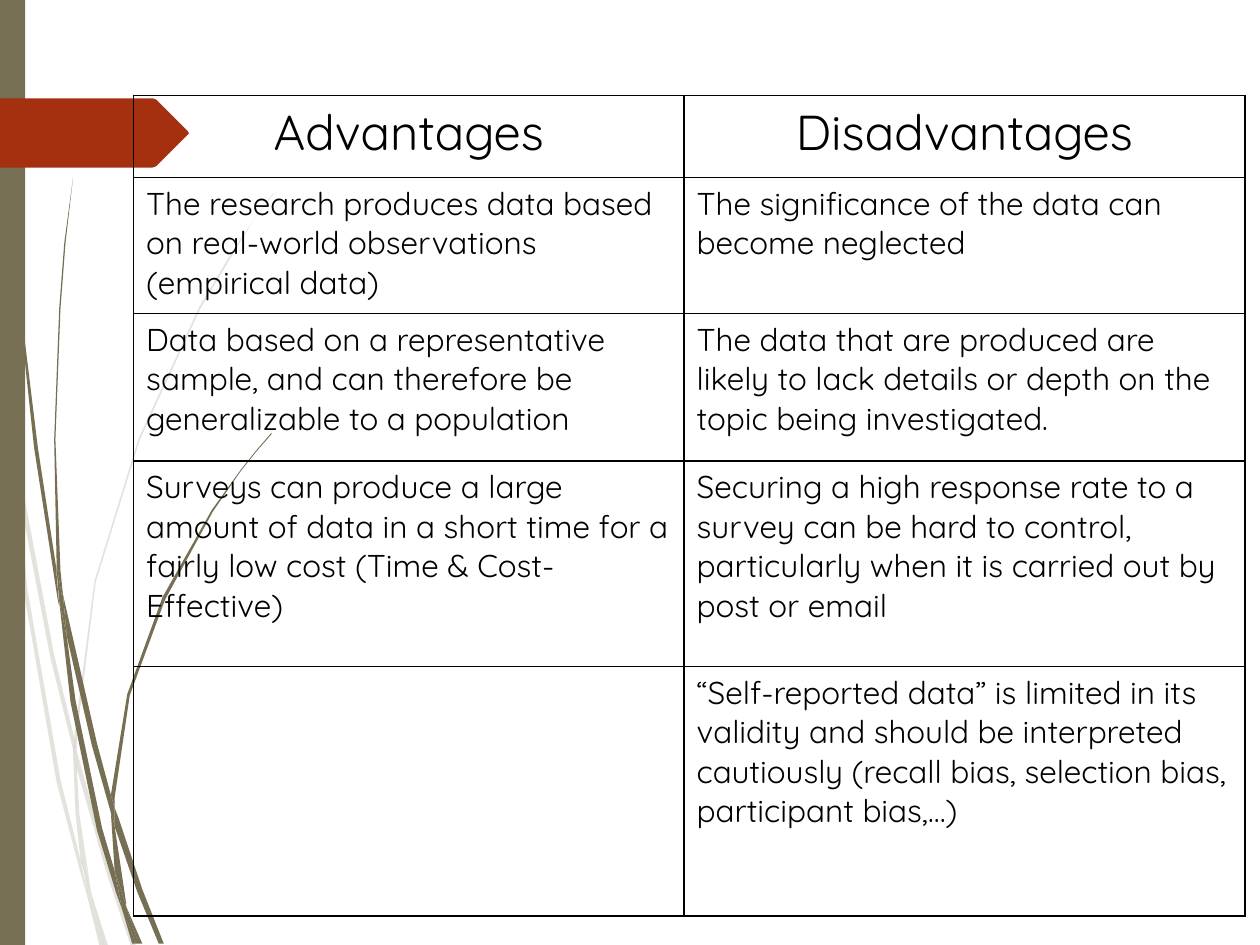
from pptx import Presentation
from pptx.dml.color import RGBColor
from pptx.enum.shapes import MSO_SHAPE as Shape
from pptx.enum.text import PP_ALIGN as Align
from pptx.oxml.xmlchemy import OxmlElement as Element
from pptx.util import Pt

PX = 9144  # EMU per px, 100 px to the inch
OLIVE = RGBColor(0x76, 0x6F, 0x54)
RUST = RGBColor(0xA5, 0x30, 0x10)
BLACK = RGBColor(0, 0, 0)

prs = Presentation()
prs.slide_width, prs.slide_height = 1000 * PX, 750 * PX
slide = prs.slides.add_slide(prs.slide_layouts[6])


def draw_outline(shapes, points, color, alpha=None):
    builder = shapes.build_freeform(*points[0], scale=PX)
    builder.add_line_segments(points[1:])
    outline = builder.convert_to_shape()
    outline.shadow.inherit = False
    outline.fill.solid()
    outline.fill.fore_color.rgb = color
    outline.line.fill.background()
    if alpha:
        opacity = Element("a:alpha")
        opacity.set("val", str(alpha * 1000))
        outline.fill._xPr.find(".//{*}srgbClr").append(opacity)


def write(cell, text, size=18, align=None):
    paragraph = cell.text_frame.paragraphs[0]
    paragraph.alignment = align
    run = paragraph.add_run()
    run.text = text
    run.font.size = Pt(size)
    run.font.name = "Quicksand"
    run.font.color.rgb = BLACK


# Grass blades: pale ones behind, solid ones in front
pale_blades = [
    [(8, 350), (6, 322), (0, 282), (0, 299), (7, 344)],
    [(40, 522), (59, 599), (59, 586), (43, 520), (10, 345), (12, 376)],
    [(64, 607), (61, 596), (61, 610), (85, 694), (104, 751), (108, 751), (88, 692)],
    [(83, 751), (86, 751), (73, 711)],
    [(64, 683), (48, 619), (22, 469), (12, 376), (8, 350), (19, 470), (45, 621),
     (64, 693), (70, 714), (69, 707)],
    [(58, 599), (60, 646), (64, 683), (67, 692), (73, 711), (72, 706), (63, 646),
     (61, 610), (61, 608)],
    [(61, 584), (76, 462), (111, 349), (159, 245), (187, 198), (201, 175), (217, 154),
     (217, 153), (201, 175), (186, 197), (158, 244), (110, 348), (75, 461), (59, 584),
     (59, 586), (61, 596)],
    [(70, 714), (79, 751), (82, 751)],
    [(61, 608), (61, 610), (61, 596), (59, 586), (58, 599)],
    [(67, 692), (65, 683), (69, 707), (70, 714), (82, 751), (83, 751), (73, 711)],
]
solid_blades = [
    [(5, 110), (14, 233), (27, 355), (46, 477), (47, 481), (45, 457), (45, 453),
     (30, 355), (15, 232), (6, 109), (4, 48), (3, 0), (2, 0), (3, 48)],
    [(73, 592), (88, 645), (88, 633), (88, 631), (77, 590), (50, 472), (53, 505)],
    [(94, 649), (91, 641), (91, 656), (109, 708), (126, 749), (130, 749), (113, 706)],
    [(91, 691), (81, 657), (60, 556), (53, 505), (47, 477), (56, 557), (77, 659),
     (92, 708), (97, 722), (96, 717)],
    [(50, 472), (48, 453), (44, 349), (48, 245), (52, 193), (58, 141), (51, 193),
     (47, 245), (43, 349), (45, 449), (49, 472)],
    [(110, 749), (113, 749), (100, 719)],
    [(47, 477), (53, 505), (50, 472), (49, 472), (45, 449), (45, 453)],
    [(91, 633), (103, 552), (131, 476), (169, 406), (191, 374), (203, 359), (216, 344),
     (215, 344), (203, 358), (191, 373), (168, 405), (129, 474), (101, 551), (88, 631),
     (91, 641)],
    [(97, 722), (105, 749), (108, 749)],
    [(88, 645), (91, 691), (96, 706), (100, 719), (100, 716), (91, 656), (90, 651)],
    [(88, 645), (90, 651), (91, 656), (91, 641), (88, 631), (88, 633)],
    [(96, 706), (91, 691), (96, 717), (97, 722), (108, 749), (110, 749), (100, 719)],
]
for blades, alpha in ((pale_blades, 20), (solid_blades, None)):
    tuft = slide.shapes.add_group_shape()
    for blade in blades:
        draw_outline(tuft.shapes, blade, OLIVE, alpha)

# Side bar and arrow tag
side_bar = slide.shapes.add_shape(Shape.RECTANGLE, 0, 0, 20 * PX, 750 * PX)
side_bar.shadow.inherit = False
side_bar.fill.solid()
side_bar.fill.fore_color.rgb = OLIVE
side_bar.line.fill.background()
draw_outline(slide.shapes, [(0, 78), (121, 78), (124, 79), (149, 104), (150, 106),
                            (149, 107), (124, 132), (121, 133), (0, 133)], RUST)

# Comparison table
comparison = [
    ("Advantages", "Disadvantages"),
    ("The research produces data based on real-world observations (empirical data)",
     "The significance of the data can become neglected"),
    ("Data based on a representative sample, and can therefore be generalizable to a population",
     "The data that are produced are likely to lack details or depth on the topic being "
     "investigated."),
    ("Surveys can produce a large amount of data in a short time for a fairly low cost "
     "(Time & Cost-Effective)",
     "Securing a high response rate to a survey can be hard to control, particularly when "
     "it is carried out by post or email"),
    ("",
     "“Self-reported data” is limited in its validity and should be interpreted cautiously "
     "(recall bias, selection bias, participant bias,…)"),
]
column_widths = [437, 445]
row_heights = [65, 108, 117, 163, 198]
table = slide.shapes.add_table(
    len(row_heights), len(column_widths), 106 * PX, 76 * PX,
    sum(column_widths) * PX, sum(row_heights) * PX).table
table.first_row = table.horz_banding = False
for column, width in zip(table.columns, column_widths):
    column.width = width * PX
for row, height in zip(table.rows, row_heights):
    row.height = height * PX

for r, entries in enumerate(comparison):
    for c, entry in enumerate(entries):
        cell = table.cell(r, c)
        if r == 0:
            write(cell, entry, size=28, align=Align.CENTER)
        elif entry:
            write(cell, entry)

        # Black rules on all four sides, placed ahead of the fill
        properties = cell._tc.get_or_add_tcPr()
        for side in ("a:lnL", "a:lnR", "a:lnT", "a:lnB"):
            rule = Element(side)
            rule.set("w", str(Pt(1)))
            ink = Element("a:solidFill")
            color = Element("a:srgbClr")
            color.set("val", str(BLACK))
            ink.append(color)
            rule.append(ink)
            properties.append(rule)
        cell.fill.background()

prs.save("out.pptx")
